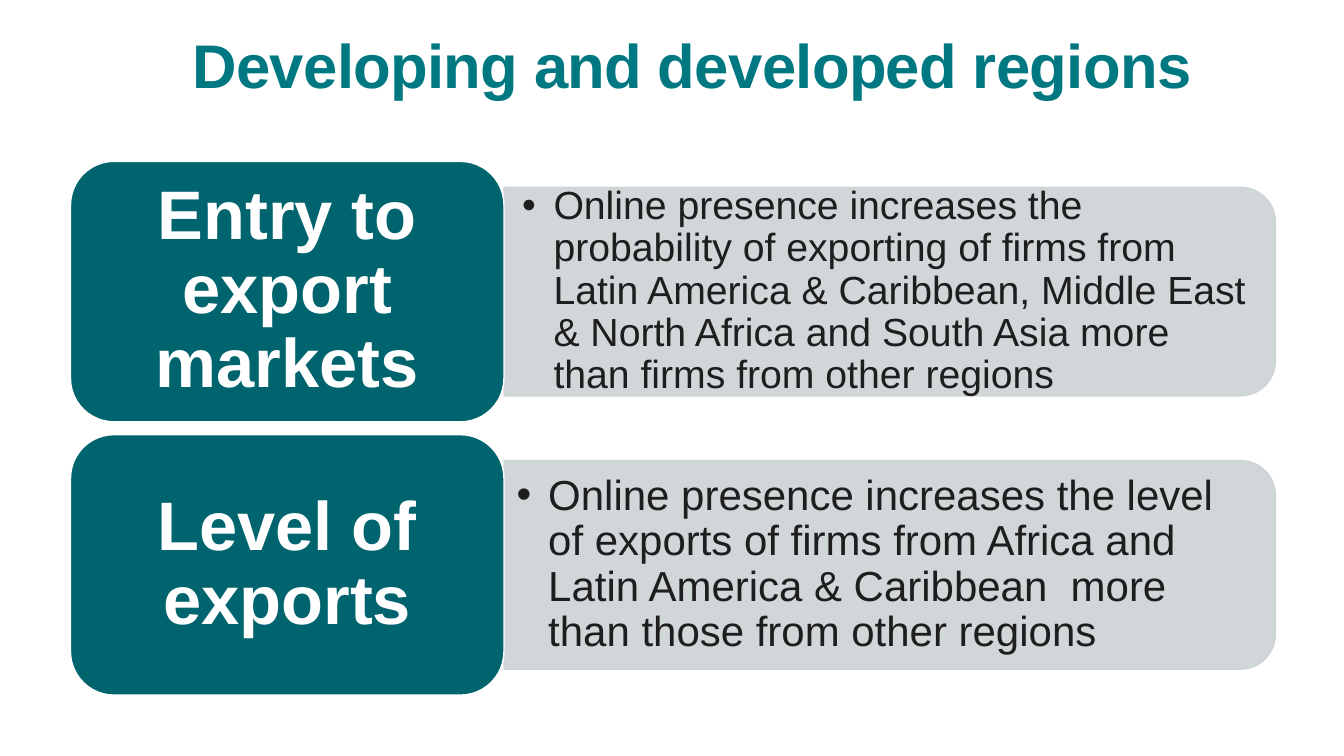
from lxml.etree import SubElement
from pptx import Presentation
from pptx.dml.color import RGBColor
from pptx.enum.shapes import MSO_SHAPE
from pptx.enum.text import MSO_ANCHOR, PP_ALIGN
from pptx.oxml.ns import qn
from pptx.util import Pt

COLORS = {"title": "007882", "topic": "00646E", "panel": "CCD3D5",
          "finding": "1E1E1E", "white": "FFFFFF"}
FONT = "Arial"
ROW_TOP, ROW_PITCH = 115.3, 195.2
TOPIC_LEFT, TOPIC_WIDTH, TOPIC_HEIGHT = 50.4, 309.6, 186
PANEL_WIDTH, PANEL_HEIGHT = 551, 149
FINDING_WIDTH, FINDING_HEIGHT = 543.6, 134.6

# topic, finding, finding size, finding side inset
ROWS = [
    ("Entry to export markets",
     "Online presence increases the probability of exporting of firms from "
     "Latin America & Caribbean, Middle East & North Africa and South Asia "
     "more than firms from other regions", 28, 12.4),
    ("Level of exports",
     "Online presence increases the level of exports of firms from Africa and "
     "Latin America & Caribbean  more than those from other regions", 30, 8.6),
]


def rgb(name):
    return RGBColor.from_string(COLORS[name])


def set_alpha(color_format_owner, percent):
    for color in color_format_owner.iter(qn("a:srgbClr")):
        SubElement(color, qn("a:alpha"), val=str(percent * 1000))


def add_block(slide, preset, left, top, width, height, fill, line):
    block = slide.shapes.add_shape(preset, Pt(left), Pt(top), Pt(width), Pt(height))
    block.shadow.inherit = False
    block.fill.solid()
    block.fill.fore_color.rgb = rgb(fill)
    block.line.color.rgb = rgb(line)
    block.line.width = Pt(1)
    return block


def add_box(slide, left, top, width, height):
    return slide.shapes.add_textbox(Pt(left), Pt(top), Pt(width), Pt(height))


def write(shape, text, size, color, insets, anchor, align=PP_ALIGN.LEFT, bold=False):
    frame = shape.text_frame
    frame.word_wrap = True
    frame.vertical_anchor = anchor
    (frame.margin_left, frame.margin_top,
     frame.margin_right, frame.margin_bottom) = map(Pt, insets)
    paragraph = frame.paragraphs[0]
    paragraph.alignment = align
    paragraph.line_spacing = 0.9
    run = paragraph.add_run()
    run.text = text
    run.font.name = FONT
    run.font.size = Pt(size)
    run.font.bold = bold
    run.font.color.rgb = rgb(color)
    return paragraph


def add_bullet(paragraph):
    paragraph.level = 1
    properties = paragraph._p.get_or_add_pPr()
    properties.set("marL", str(Pt(22.5)))
    properties.set("indent", str(-Pt(22.5)))
    SubElement(properties, qn("a:buFont"), typeface=FONT)
    SubElement(properties, qn("a:buChar"), char="•")


def add_title(slide, text):
    box = add_box(slide, 137.5, 21.6, 773.3, 77.8)
    paragraph = write(box, text, 44, "title", (0, 3.6, 7.2, 3.6), MSO_ANCHOR.TOP, bold=True)
    paragraph.runs[0].font._element.set("spc", "-50")


def add_panel(slide, left, middle):
    # Turned a quarter so that the rounded corners face right
    panel = add_block(slide, MSO_SHAPE.ROUND_2_SAME_RECTANGLE,
                      left + (PANEL_WIDTH - PANEL_HEIGHT) / 2, middle - PANEL_WIDTH / 2,
                      PANEL_HEIGHT, PANEL_WIDTH, "panel", "panel")
    panel.rotation = 90
    set_alpha(panel._element.spPr, 90)


def add_row(slide, top, topic, finding, size, side):
    middle = top + TOPIC_HEIGHT / 2
    panel_left = TOPIC_LEFT + TOPIC_WIDTH
    add_panel(slide, panel_left, middle)

    finding_box = add_box(slide, panel_left + 0.5, middle - FINDING_HEIGHT / 2,
                          FINDING_WIDTH, FINDING_HEIGHT)
    add_bullet(write(finding_box, finding, size, "finding",
                     (side, side / 2, side, side / 2), MSO_ANCHOR.MIDDLE))

    topic_block = add_block(slide, MSO_SHAPE.ROUNDED_RECTANGLE, TOPIC_LEFT, top,
                            TOPIC_WIDTH, TOPIC_HEIGHT, "topic", "white")
    write(topic_block, topic, 49, "white", (14.7, 7.35, 14.7, 7.35),
          MSO_ANCHOR.MIDDLE, PP_ALIGN.CENTER, bold=True)


def main():
    deck = Presentation()
    deck.slide_width, deck.slide_height = Pt(960), Pt(540)
    slide = deck.slides.add_slide(deck.slide_layouts[6])
    for index, row in enumerate(ROWS):
        add_row(slide, ROW_TOP + index * ROW_PITCH, *row)
    add_title(slide, "Developing and developed regions")
    deck.save("out.pptx")


if __name__ == "__main__":
    main()
